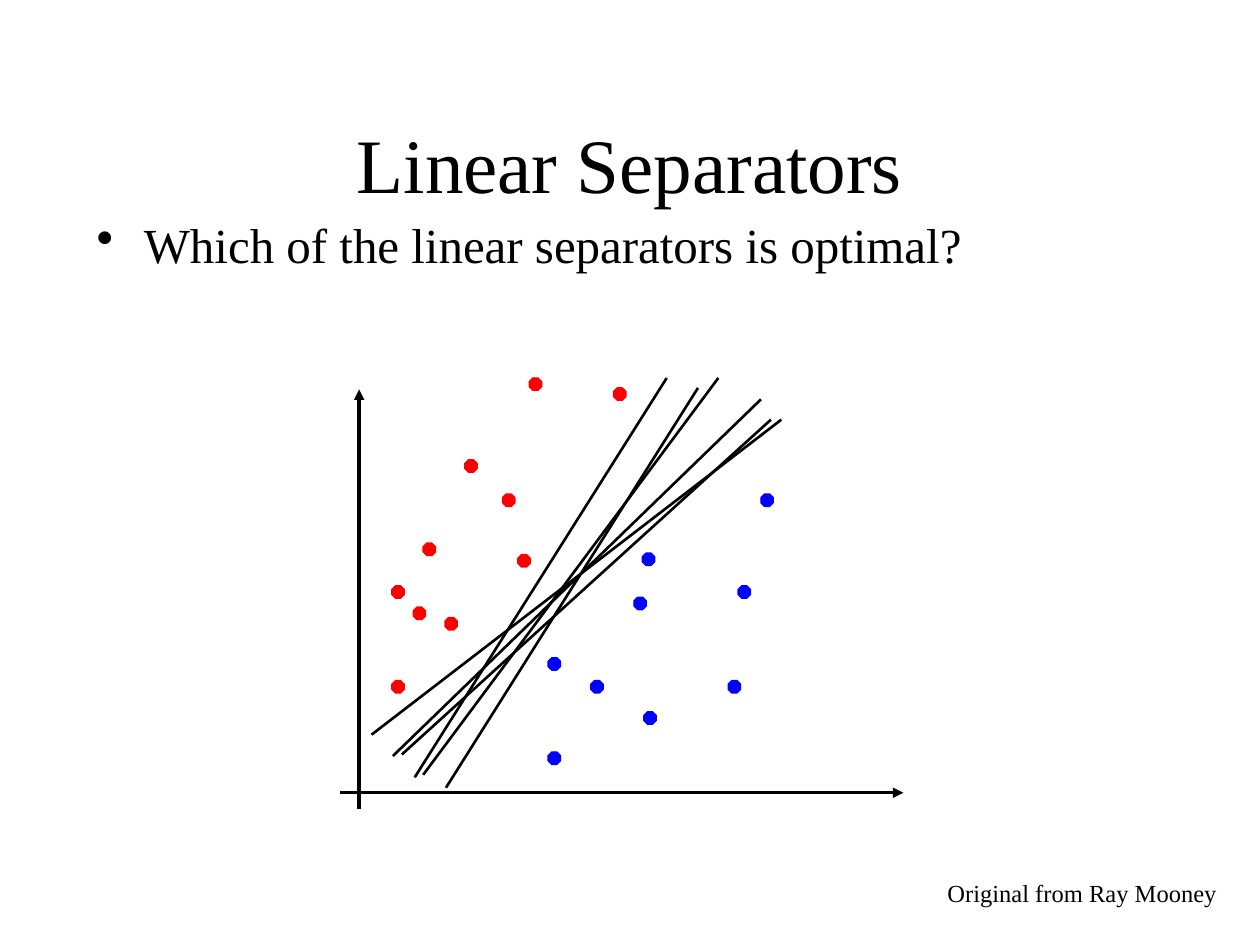
from dataclasses import dataclass

from lxml.etree import SubElement
from pptx import Presentation
from pptx.dml.color import RGBColor
from pptx.enum.shapes import MSO_CONNECTOR as Connector, MSO_SHAPE as Preset
from pptx.enum.text import MSO_ANCHOR as Anchor, MSO_AUTO_SIZE as AutoSize, PP_ALIGN as Align
from pptx.oxml.ns import qn
from pptx.util import Cm, Pt


@dataclass(frozen=True)
class Theme:
    font: str = "Times New Roman"
    ink: RGBColor = RGBColor(0, 0, 0)
    red: RGBColor = RGBColor(255, 0, 0)
    blue: RGBColor = RGBColor(0, 0, 255)
    title_size: Pt = Pt(44)
    body_size: Pt = Pt(28)
    credit_size: Pt = Pt(14)
    axis_width: Pt = Pt(2)
    separator_width: Pt = Pt(1.5)
    marker_width: Pt = Pt(0.75)


THEME = Theme()
MARKER_SIZE = 0.25

# All positions in centimetres: left, top of each marker
RED_POINTS = [
    (10.13, 9.96), (8.53, 10.95), (8.97, 12.45), (7.9, 13.72), (9.37, 9.27),
    (7.9, 11.81), (8.33, 12.24), (10.44, 11.18), (10.67, 7.62), (12.37, 7.82),
]
BLUE_POINTS = [
    (12.95, 11.15), (11.91, 13.72), (14.68, 13.72), (11.05, 15.16), (12.78, 12.04),
    (11.05, 13.26), (12.98, 14.35), (14.88, 11.81), (15.34, 9.96),
]
# Start and end of each line
AXES = [((7.24, 16.31), (7.24, 7.85)), ((6.86, 15.98), (18.21, 15.98))]
SEPARATORS = [
    ((8.1, 15.21), (15.54, 8.46)), ((8.53, 15.62), (14.48, 7.62)),
    ((7.49, 14.81), (15.75, 8.46)), ((8.99, 15.88), (14.07, 7.82)),
    ((8.36, 15.67), (13.44, 7.62)), ((7.92, 15.24), (15.34, 8.05)),
]


def add_text(slide, text, box, size, wrap=True):
    shape = slide.shapes.add_textbox(*map(Cm, box))
    frame = shape.text_frame
    frame.word_wrap = wrap
    frame.text = text
    paragraph = frame.paragraphs[0]
    paragraph.font.name = THEME.font
    paragraph.font.size = size
    paragraph.font.color.rgb = THEME.ink
    return frame


def add_bullet(paragraph, indent):
    properties = paragraph._p.get_or_add_pPr()
    properties.set("marL", str(indent))
    properties.set("indent", str(-indent))
    SubElement(properties, qn("a:buChar"), char="•")


def add_line(slide, start, end, width, arrow=False):
    connector = slide.shapes.add_connector(Connector.STRAIGHT, *map(Cm, start + end))
    connector.line.color.rgb = THEME.ink
    connector.line.width = width
    if arrow:
        SubElement(connector.line._get_or_add_ln(), qn("a:tailEnd"), type="triangle")
    SubElement(connector._element.spPr, qn("a:effectLst"))


def add_marker(slide, left, top, color):
    shape = slide.shapes.add_shape(
        Preset.OCTAGON, Cm(left), Cm(top), Cm(MARKER_SIZE), Cm(MARKER_SIZE))
    shape.shadow.inherit = False
    shape.fill.solid()
    shape.fill.fore_color.rgb = color
    shape.line.color.rgb = color
    shape.line.width = THEME.marker_width


def main():
    presentation = Presentation()
    presentation.slide_width = Cm(25.4)
    presentation.slide_height = Cm(19.05)
    slide = presentation.slides.add_slide(presentation.slide_layouts[6])

    # Title and question
    title = add_text(slide, "Linear Separators", (1.9, 1.7, 21.59, 3.18), THEME.title_size)
    title.vertical_anchor = Anchor.MIDDLE
    title.paragraphs[0].alignment = Align.CENTER
    body = add_text(slide, "Which of the linear separators is optimal?",
                    (1.7, 4.19, 22.86, 13.97), THEME.body_size)
    question = body.paragraphs[0]
    question.space_before = Pt(5.6)
    add_bullet(question, Cm(0.95))

    # Axes
    for start, end in AXES:
        add_line(slide, start, end, THEME.axis_width, arrow=True)

    # Two classes of points
    for points, color in ((RED_POINTS, THEME.red), (BLUE_POINTS, THEME.blue)):
        for left, top in points:
            add_marker(slide, left, top, color)

    # Candidate separators
    for start, end in SEPARATORS:
        add_line(slide, start, end, THEME.separator_width)

    # Credit
    credit = add_text(slide, "Original from Ray Mooney", (18.85, 17.58, 5.99, 0.86),
                      THEME.credit_size, wrap=False)
    credit.auto_size = AutoSize.SHAPE_TO_FIT_TEXT

    presentation.save("out.pptx")


if __name__ == "__main__":
    main()
